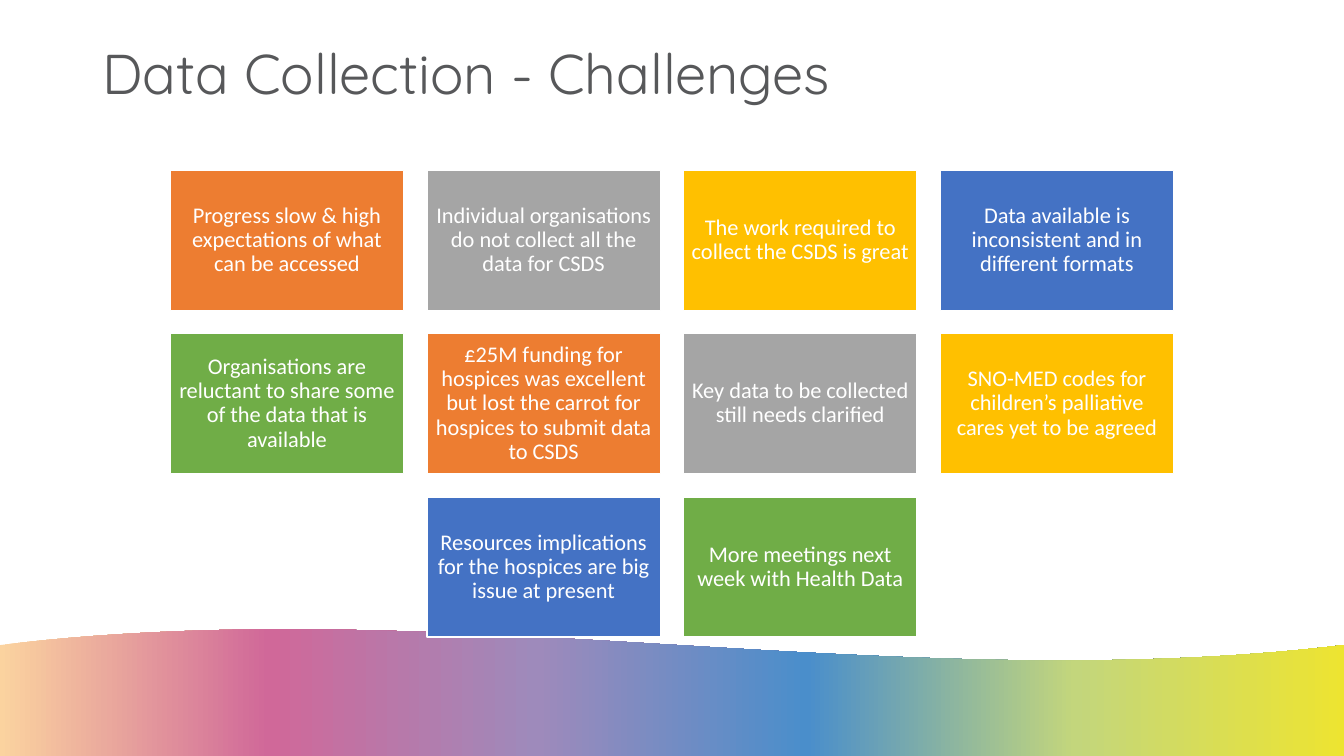
from lxml import etree
from pptx import Presentation
from pptx.dml.color import RGBColor
from pptx.enum.shapes import MSO_SHAPE as Shape
from pptx.enum.text import MSO_ANCHOR as Anchor, MSO_AUTO_SIZE as Fit, PP_ALIGN as Align
from pptx.oxml.ns import qn
from pptx.util import Pt

WIDE, HIGH = 960, 540
COLS = 4
BOX_W, BOX_H = 166.67, 100
GAP = 16.67
TOP = 121.67
INSET = 5
STEPS = 60

HUES = {"white": "FFFFFF", "title": "57585A", "orange": "ED7D31", "grey": "A5A5A5",
        "gold": "FFC000", "blue": "4472C4", "green": "70AD47"}
CYCLE = ["orange", "grey", "gold", "blue", "green"]
WAVE = {0: "FBD39F", 20: "D06899", 40: "9E8ABB", 60: "4A8ECB", 80: "C3D67C", 100: "EDE431"}
CREST = (460.8, 421.9, 499, 460.8)

ISSUES = [
    "Progress slow & high expectations of what can be accessed",
    "Individual organisations do not collect all the data for CSDS",
    "The work required to collect the CSDS is great",
    "Data available is inconsistent and in different formats",
    "Organisations are reluctant to share some of the data that is available",
    "£25M funding for hospices was excellent but lost the carrot for hospices to submit data to CSDS",
    "Key data to be collected still needs clarified",
    "SNO-MED codes for children’s palliative cares yet to be agreed",
    "Resources implications for the hospices are big issue at present",
    "More meetings next week with Health Data",
]


def rgb(name):
    return RGBColor.from_string(HUES[name])


def style(frame, text, face, size, hue, align):
    frame.text = text
    para = frame.paragraphs[0]
    para.alignment = align
    para.line_spacing = 0.9
    font = para.runs[0].font
    font.name, font.size = face, Pt(size)
    font.color.rgb = rgb(hue)


def crest(t):
    """Height of the cubic curve at t, from 0 at the left to 1 at the right."""
    a, b, c, d = CREST
    s = 1 - t
    return a * s**3 + 3 * b * s * s * t + 3 * c * s * t * t + d * t**3


def add_wave(slide):
    edge = [(Pt(WIDE * i / STEPS), Pt(crest(i / STEPS))) for i in range(STEPS + 1)]
    base = [(Pt(WIDE), Pt(HIGH)), (0, Pt(HIGH))]
    pen = slide.shapes.build_freeform(*edge[0])
    pen.add_line_segments(edge[1:] + base, close=True)
    wave = pen.convert_to_shape()
    wave.shadow.inherit = False
    wave.line.fill.background()
    wave.fill.gradient()
    wave.fill.gradient_angle = 0
    stops = wave._element.spPr.find(".//" + qn("a:gsLst"))
    for old in list(stops):
        stops.remove(old)
    for pos, hue in WAVE.items():
        stop = etree.SubElement(stops, qn("a:gs"), pos=str(pos * 1000))
        etree.SubElement(stop, qn("a:srgbClr"), val=hue)
    slide.shapes._spTree.insert(2, wave._element)


def add_title(slide, text):
    title = slide.shapes.title
    title.left, title.top, title.width, title.height = Pt(66), Pt(29), Pt(576), Pt(104)
    frame = title.text_frame
    frame.auto_size = Fit.NONE
    frame.vertical_anchor = Anchor.TOP
    style(frame, text, "Quicksand", 40, "title", Align.LEFT)


def add_box(slide, left, top, text, hue):
    box = slide.shapes.add_shape(Shape.RECTANGLE, Pt(left), Pt(top), Pt(BOX_W), Pt(BOX_H))
    box.shadow.inherit = False
    box.fill.solid()
    box.fill.fore_color.rgb = rgb(hue)
    box.line.color.rgb = rgb("white")
    box.line.width = Pt(1)
    frame = box.text_frame
    frame.word_wrap = True
    frame.vertical_anchor = Anchor.MIDDLE
    frame.margin_left = frame.margin_right = Pt(INSET)
    frame.margin_top = frame.margin_bottom = Pt(INSET)
    style(frame, text, "Calibri", 16, "white", Align.CENTER)


def add_grid(slide, texts):
    """Lay the boxes out in rows, each row centred on the slide."""
    for n, text in enumerate(texts):
        row, col = divmod(n, COLS)
        count = min(COLS, len(texts) - row * COLS)
        start = (WIDE - count * BOX_W - (count - 1) * GAP) / 2
        add_box(slide, start + col * (BOX_W + GAP), TOP + row * (BOX_H + GAP),
                text, CYCLE[n % len(CYCLE)])


def main():
    deck = Presentation()
    deck.slide_width, deck.slide_height = Pt(WIDE), Pt(HIGH)
    slide = deck.slides.add_slide(deck.slide_layouts[5])
    add_wave(slide)
    add_title(slide, "Data Collection - Challenges")
    add_grid(slide, ISSUES)
    deck.save("out.pptx")


if __name__ == "__main__":
    main()
